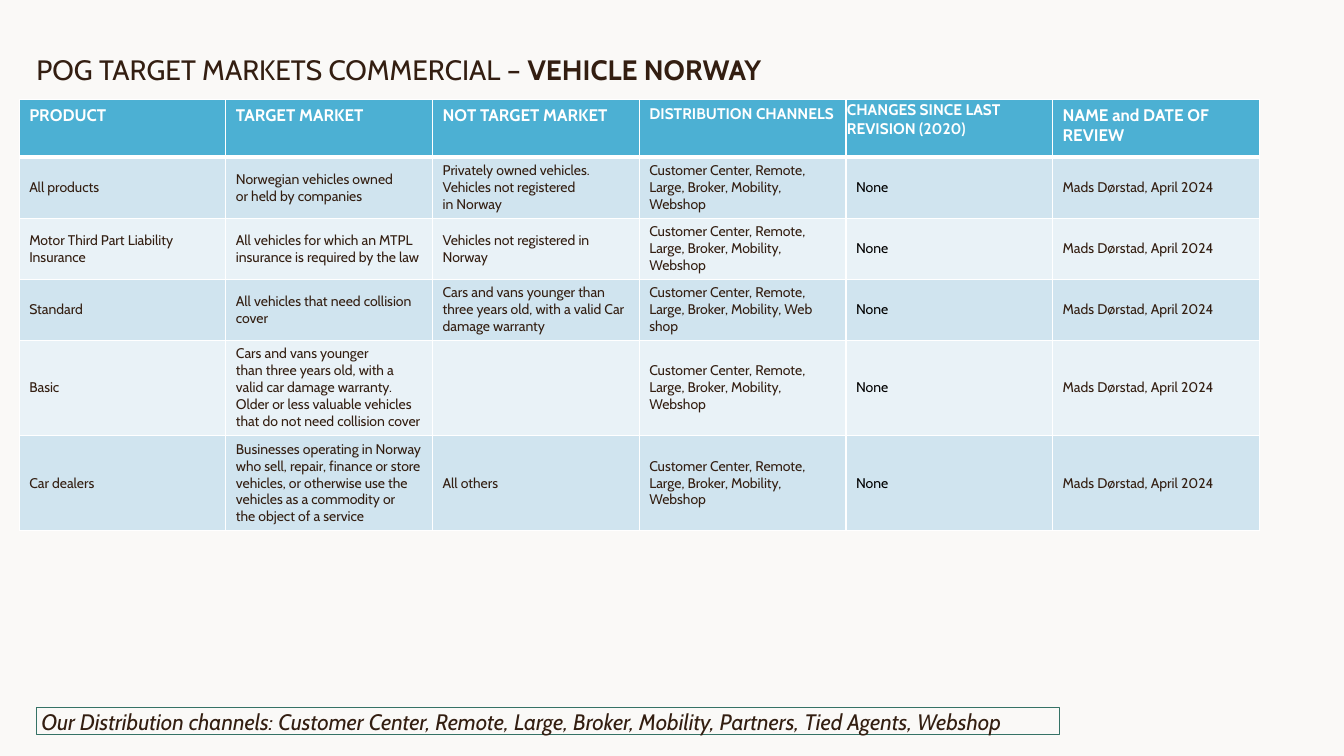
"""Builds the target market slide for commercial vehicles in Norway."""
from lxml import etree
from pptx import Presentation
from pptx.dml.color import RGBColor
from pptx.enum.shapes import MSO_SHAPE
from pptx.enum.text import MSO_ANCHOR, MSO_AUTO_SIZE, PP_ALIGN
from pptx.oxml.ns import qn
from pptx.util import Inches, Pt

RECTANGLE = MSO_SHAPE.RECTANGLE
TOP, MIDDLE = MSO_ANCHOR.TOP, MSO_ANCHOR.MIDDLE
LEFT = PP_ALIGN.LEFT
FIT_SHAPE = MSO_AUTO_SIZE.SHAPE_TO_FIT_TEXT
NO_FIT = MSO_AUTO_SIZE.NONE

BROWN = RGBColor(0x33, 0x1E, 0x11)
BLACK = RGBColor(0, 0, 0)
WHITE = RGBColor(0xFF, 0xFF, 0xFF)
PAPER = RGBColor(0xFA, 0xF9, 0xF7)
HEADER_BLUE = RGBColor(0x4C, 0xB0, 0xD3)
BANDS = RGBColor(0xD0, 0xE4, 0xEF), RGBColor(0xE9, 0xF2, 0xF7)
GREEN = RGBColor(0x35, 0x72, 0x66)

FONT = "Cabin"
TIE = "~"
NO_BREAK_SPACE = chr(160)

HEADINGS = [
    ("PRODUCT", 12), ("TARGET MARKET", 12), ("NOT TARGET MARKET", 12),
    ("DISTRIBUTION CHANNELS", 11), ("CHANGES SINCE LAST REVISION (2020)", 11),
    ("NAME and DATE OF REVIEW", 12),
]
CHANGES_COLUMN = 4
CHANNELS = "Customer Center, Remote, Large,~Broker, Mobility, Webshop"
CHANGES = "None"
REVIEW = "Mads Dørstad, April~2024"
PRODUCTS = [
    ("All products", "Norwegian vehicles owned or~held by companies",
     "Privately owned~vehicles. Vehicles~not registered in~Norway", CHANNELS),
    ("Motor Third Part Liability Insurance",
     "All vehicles for which an~MTPL insurance is required~by the law",
     "Vehicles not registered in Norway", CHANNELS),
    ("Standard", "All vehicles that need collision cover",
     "Cars and vans~younger than three~years old, with a~valid Car damage~warranty",
     "Customer Center, Remote, Large,~Broker, Mobility, Web shop"),
    ("Basic",
     "Cars and vans younger than~three years old, with a valid~car~damage~warranty.\n"
     "Older or less valuable~vehicles that do not need~collision cover", "", CHANNELS),
    ("Car dealers",
     "Businesses operating in~Norway who sell, repair,~finance or store vehicles, or~"
     "otherwise use the vehicles~as a commodity or the~object of a service",
     "All others", CHANNELS),
]
ROW_HEIGHTS = [0.57, 0.6, 0.6, 0.6, 0.94, 0.94]


def add_text(paragraph, text, *, size, color=BROWN, bold=False, italic=False):
    """Add a formatted run to a paragraph."""
    run = paragraph.add_run()
    run.text = text.replace(TIE, NO_BREAK_SPACE)
    font = run.font
    font.name, font.size, font.bold, font.italic = FONT, Pt(size), bold, italic
    font.color.rgb = color
    paragraph.alignment = LEFT


class MarketSlide:
    """Holds the slide and draws its elements in one style."""

    def __init__(self, presentation):
        self.slide = presentation.slides.add_slide(presentation.slide_layouts[5])
        background = self.slide.background.fill
        background.solid()
        background.fore_color.rgb = PAPER

    def frame(self, frame, anchor, inset=0.0):
        """Set the insets, anchor and wrapping of a text frame."""
        frame.margin_left = Inches(inset)
        frame.margin_right = frame.margin_top = frame.margin_bottom = 0
        frame.vertical_anchor = anchor
        frame.word_wrap = True

    def title(self, lead, subject, left, top, width, height):
        """Fill and place the title placeholder."""
        title = self.slide.shapes.title
        title.left, title.top = Inches(left), Inches(top)
        title.width, title.height = Inches(width), Inches(height)
        self.frame(title.text_frame, TOP)
        title.text_frame.auto_size = NO_FIT
        paragraph = title.text_frame.paragraphs[0]
        paragraph.line_spacing = Pt(36)
        add_text(paragraph, lead, size=20)
        add_text(paragraph, subject, size=20, bold=True)

    def borders(self, cell, top, bottom):
        """Draw white borders around a cell, with widths in points."""
        properties = cell._tc.get_or_add_tcPr()
        for side, width in (("L", 1), ("R", 1), ("T", top), ("B", bottom)):
            line = etree.SubElement(properties, qn(f"a:ln{side}"), w=str(Pt(width)))
            fill = etree.SubElement(line, qn("a:solidFill"))
            etree.SubElement(fill, qn("a:srgbClr"), val=str(WHITE))

    def cell(self, cell, text, fill, anchor, top=1, bottom=1, **style):
        """Format a cell and write its paragraphs."""
        self.borders(cell, top, bottom)
        cell.fill.solid()
        cell.fill.fore_color.rgb = fill
        cell.vertical_anchor = anchor
        for index, line in enumerate(text.split("\n")):
            frame = cell.text_frame
            paragraph = frame.add_paragraph() if index else frame.paragraphs[0]
            if line:
                add_text(paragraph, line, **style)

    def table(self, left, top, width):
        """Add the table of products and their markets."""
        table = self.slide.shapes.add_table(
            len(ROW_HEIGHTS), len(HEADINGS), Inches(left), Inches(top),
            Inches(width), Inches(sum(ROW_HEIGHTS))).table
        table.horz_banding = False
        for row, height in zip(table.rows, ROW_HEIGHTS):
            row.height = Inches(height)
        for column, (heading, size) in enumerate(HEADINGS):
            self.cell(table.cell(0, column), heading, HEADER_BLUE, TOP, bottom=3,
                      size=size, color=WHITE, bold=True)
        changes = table.cell(0, CHANGES_COLUMN)
        changes.margin_left = changes.margin_right = changes.margin_top = Inches(0.01)
        changes.margin_bottom = 0
        for row, product in enumerate(PRODUCTS, start=1):
            for column, text in enumerate((*product, CHANGES, REVIEW)):
                self.cell(table.cell(row, column), text, BANDS[(row - 1) % 2], MIDDLE,
                          top=3 if row == 1 else 1, size=10,
                          color=BLACK if column == CHANGES_COLUMN else BROWN)

    def note(self, text, left, top, width, height):
        """Add an outlined note in italics."""
        note = self.slide.shapes.add_shape(
            RECTANGLE, Inches(left), Inches(top), Inches(width), Inches(height))
        note.shadow.inherit = False
        note.fill.background()
        note.line.color.rgb = GREEN
        note.line.width = Pt(0.75)
        self.frame(note.text_frame, MIDDLE, inset=0.05)
        note.text_frame.auto_size = FIT_SHAPE
        add_text(note.text_frame.paragraphs[0], text, size=16, italic=True)


def main():
    """Build and save the presentation."""
    presentation = Presentation()
    presentation.slide_width, presentation.slide_height = Inches(13.33), Inches(7.5)
    slide = MarketSlide(presentation)
    slide.title("POG TARGET MARKETS COMMERCIAL – ", "VEHICLE NORWAY", 0.36, 0.35, 12.39, 1.02)
    slide.table(0.19, 0.99, 12.3)
    slide.note("Our Distribution channels: Customer Center, Remote, Large, Broker, Mobility, "
               "Partners, Tied Agents, Webshop", 0.36, 7.02, 10.15, 0.27)
    presentation.save("out.pptx")


if __name__ == "__main__":
    main()
